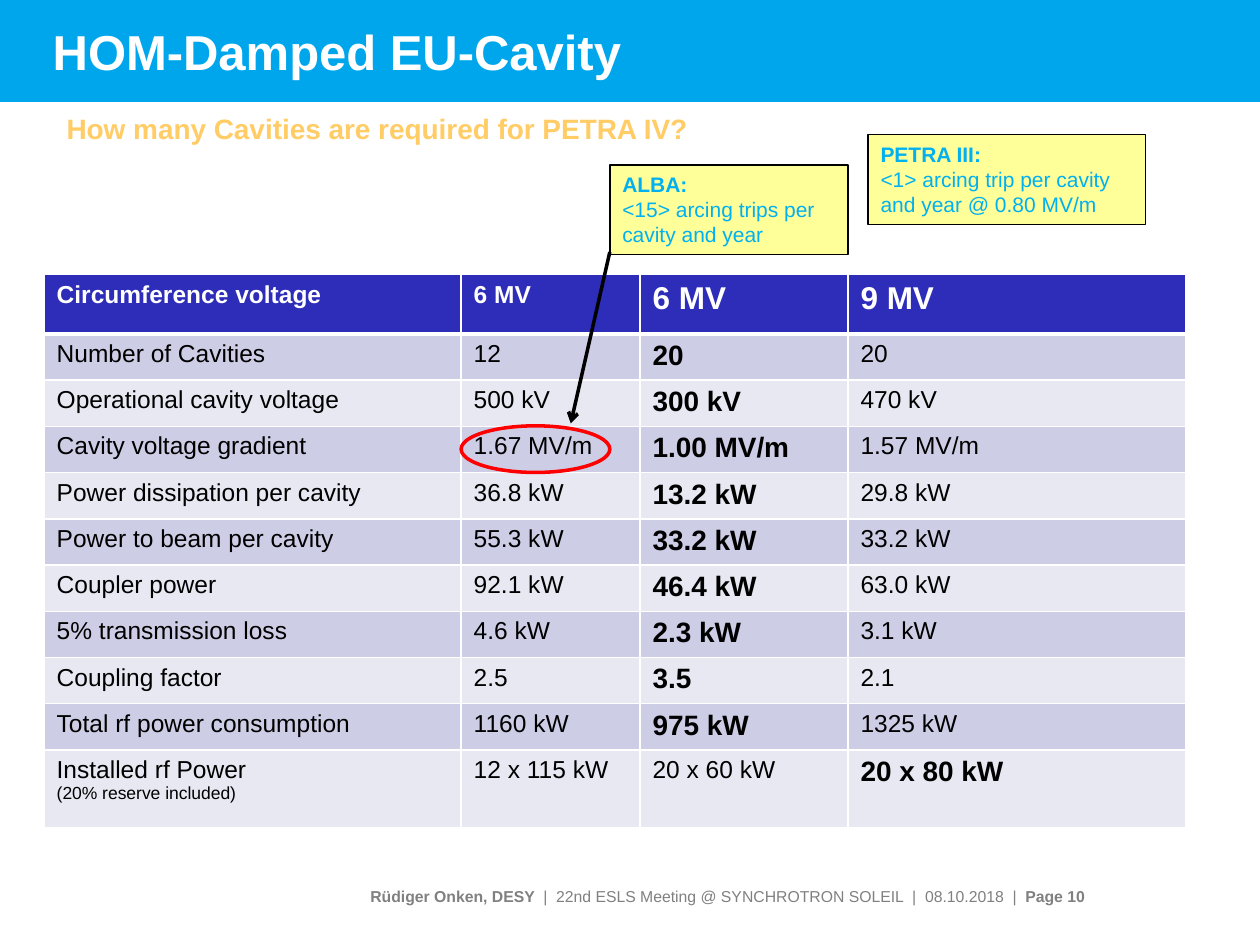
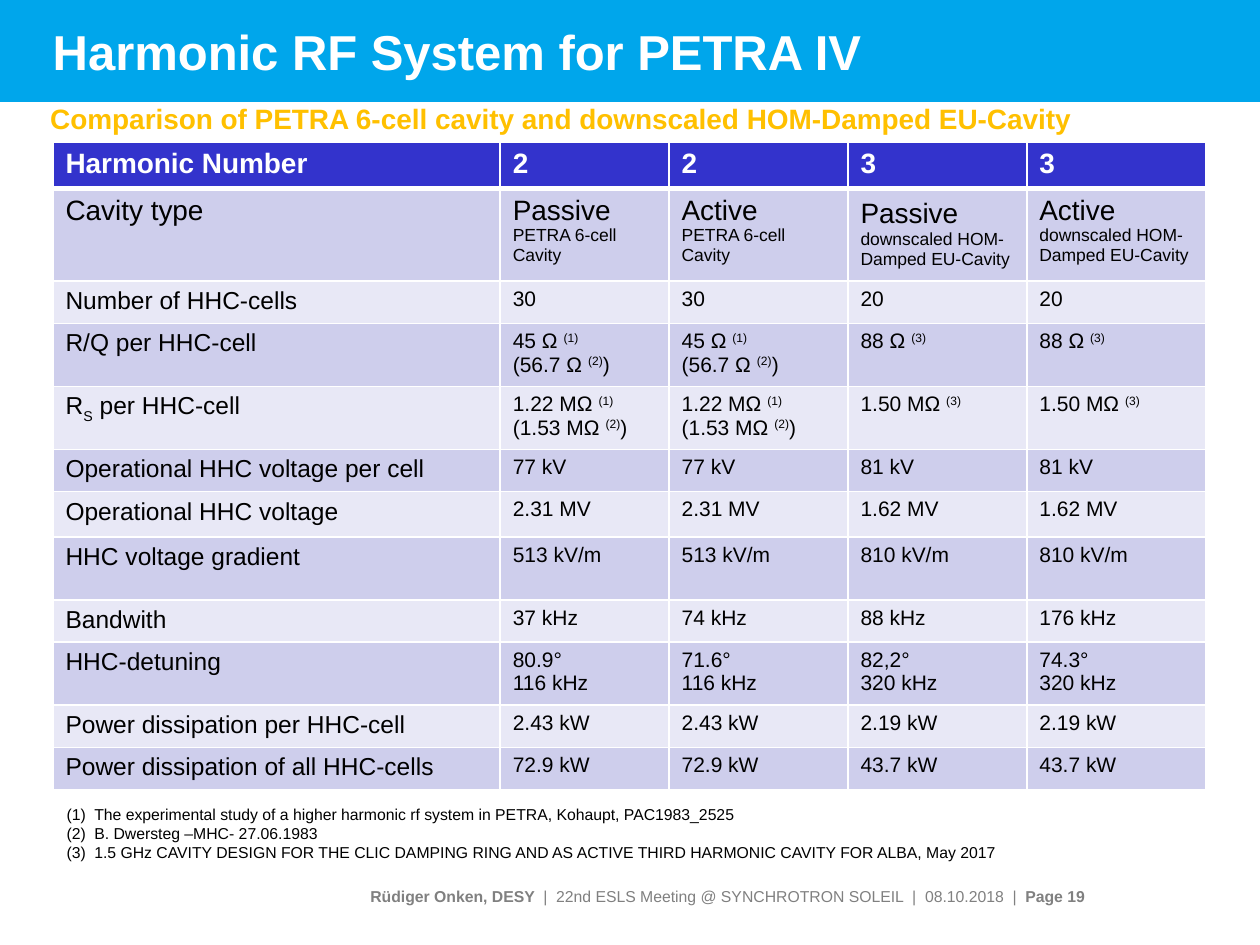
from lxml import etree
from pptx import Presentation
from pptx.dml.color import RGBColor
from pptx.enum.shapes import MSO_CONNECTOR, MSO_SHAPE
from pptx.enum.text import MSO_ANCHOR, PP_ALIGN
from pptx.oxml.ns import qn
from pptx.util import Inches, Pt

RECTANGLE, ELLIPSE = MSO_SHAPE.RECTANGLE, MSO_SHAPE.OVAL
STRAIGHT = MSO_CONNECTOR.STRAIGHT
TOP, MIDDLE = MSO_ANCHOR.TOP, MSO_ANCHOR.MIDDLE
LEFT, RIGHT = PP_ALIGN.LEFT, PP_ALIGN.RIGHT

# The slide is a grid of 100 columns by 75 rows; every length counts grid cells
SLIDE_WIDTH, SLIDE_HEIGHT = Inches(10), Inches(7.5)
CELL = SLIDE_WIDTH // 100

FONT = "Arial"
WHITE, BLACK, GREY, RED = "FFFFFF", "000000", "808080", "FF0000"
BAND_BLUE, NOTE_BLUE, NOTE_YELLOW = "00A6EB", "00B0F0", "FFFF99"

# Header fill and the two alternating row fills
VOLTAGE_FILLS = ("2D2DB9", "CDCDE6", "E8E8F3")
HARMONIC_FILLS = ("3333CC", "CECEEC", "E8E8F6")

TITLE_BOX = (3.2, 0, 93.1, 8.1)
FOOTER_BOX = (3.1, 68.95, 83, 4.4)

VOLTAGE_COLUMNS = (33.1, 14.2, 16.5, 26.8)
VOLTAGE_ROWS = (4.7,) + (3.53,) * 9 + (6.2,)
VOLTAGE_CELLS = (
    ("Circumference voltage", "6 MV", "6 MV", "9 MV"),
    ("Number of Cavities", "12", "20", "20"),
    ("Operational cavity voltage", "500 kV", "300 kV", "470 kV"),
    ("Cavity voltage gradient", "1.67 MV/m", "1.00 MV/m", "1.57 MV/m"),
    ("Power dissipation per cavity", "36.8 kW", "13.2 kW", "29.8 kW"),
    ("Power to beam per cavity", "55.3 kW", "33.2 kW", "33.2 kW"),
    ("Coupler power", "92.1 kW", "46.4 kW", "63.0 kW"),
    ("5% transmission loss", "4.6 kW", "2.3 kW", "3.1 kW"),
    ("Coupling factor", "2.5", "3.5", "2.1"),
    ("Total rf power consumption", "1160 kW", "975 kW", "1325 kW"),
    ("Installed rf Power\n(20% reserve included)", "12 x 115 kW", "20 x 60 kW", "20 x 80 kW"),
)

# Carets enclose raised or lowered text; line breaks separate paragraphs
HARMONIC_COLUMNS = (35.5, 13.4, 14.2, 14.2, 14.2)
HARMONIC_ROWS = (3.65, 7.3, 3.35, 5, 5, 3.35, 3.6, 5, 3.35, 5, 3.35, 3.35)
SIX_CELL, DOWNSCALED = "PETRA 6-cell Cavity", "downscaled HOM-Damped EU-Cavity"
R_OVER_Q = "45 Ω ^(1)^\n(56.7 Ω ^(2)^)"
SHUNT = "1.22 MΩ ^(1)^\n(1.53 MΩ ^(2)^)"
HARMONIC_CELLS = (
    ("Harmonic Number", "2", "2", "3", "3"),
    ("Cavity type", f"Passive\n{SIX_CELL}", f"Active\n{SIX_CELL}", "Passive", f"Active\n{DOWNSCALED}"),
    ("Number of HHC-cells", "30", "30", "20", "20"),
    ("R/Q per HHC-cell", R_OVER_Q, R_OVER_Q, "88 Ω ^(3)^", "88 Ω ^(3)^"),
    ("R^S^ per HHC-cell", SHUNT, SHUNT, "1.50 MΩ ^(3)^", "1.50 MΩ ^(3)^"),
    ("Operational HHC voltage per cell", "77 kV", "77 kV", "81 kV", "81 kV"),
    ("Operational HHC voltage", "2.31 MV", "2.31 MV", "1.62 MV", "1.62 MV"),
    ("HHC voltage gradient", "513 kV/m", "513 kV/m", "810 kV/m", "810 kV/m"),
    ("Bandwith", "37 kHz", "74 kHz", "88 kHz", "176 kHz"),
    ("HHC-detuning", "80.9°\n116 kHz", "71.6°\n116 kHz", "82,2°\n320 kHz", "74.3°\n320 kHz"),
    ("Power dissipation per HHC-cell", "2.43 kW", "2.43 kW", "2.19 kW", "2.19 kW"),
    ("Power dissipation of all HHC-cells", "72.9 kW", "72.9 kW", "43.7 kW", "43.7 kW"),
)
REFERENCES = (
    "The experimental study of a higher harmonic rf system in PETRA, Kohaupt, PAC1983_2525",
    "B. Dwersteg –MHC- 27.06.1983",
    "1.5 GHz CAVITY DESIGN FOR THE CLIC DAMPING RING AND AS ACTIVE THIRD HARMONIC CAVITY FOR ALBA, May 2017",
)


def color(hex_string):
    return RGBColor.from_string(hex_string)


def grid(*counts):
    return [round(count * CELL) for count in counts]


def style(paragraph, size, hex_color, bold=False, align=LEFT):
    paragraph.alignment = align
    font = paragraph.font
    font.name, font.size, font.bold = FONT, Pt(size), bold
    font.color.rgb = color(hex_color)


def add_run(paragraph, text):
    run = paragraph.add_run()
    run.text = text
    return run


def paragraphs_for(frame, count):
    """Return the frame's first paragraph followed by new ones."""
    return [frame.paragraphs[0]] + [frame.add_paragraph() for _ in range(count - 1)]


def add_text_box(slide, box, anchor=TOP):
    frame = slide.shapes.add_textbox(*grid(*box)).text_frame
    frame.word_wrap = True
    frame.vertical_anchor = anchor
    return frame


def add_line_of_text(slide, box, text, size, hex_color, anchor=TOP):
    paragraph = add_text_box(slide, box, anchor).paragraphs[0]
    add_run(paragraph, text)
    style(paragraph, size, hex_color, bold=True)


def add_shape(slide, kind, box, fill=None, line=None, width=1):
    shape = slide.shapes.add_shape(kind, *grid(*box))
    shape.shadow.inherit = False
    if fill:
        shape.fill.solid()
        shape.fill.fore_color.rgb = color(fill)
    else:
        shape.fill.background()
    if line:
        shape.line.color.rgb = color(line)
        shape.line.width = Pt(width)
    else:
        shape.line.fill.background()
    return shape


def add_footer(slide, box, page):
    frame = add_text_box(slide, box, MIDDLE)
    frame.margin_right = 0
    paragraph = frame.paragraphs[0]
    add_run(paragraph, "Rüdiger Onken, DESY  ").font.bold = True
    add_run(paragraph, "|  22nd ESLS Meeting @ SYNCHROTRON SOLEIL  |  08.10.2018  |  ")
    add_run(paragraph, f"Page {page}").font.bold = True
    style(paragraph, 9, GREY, align=RIGHT)


def add_base_slide(presentation, title, page):
    """Add a slide with the title band and the footer."""
    slide = presentation.slides.add_slide(presentation.slide_layouts[6])
    add_shape(slide, RECTANGLE, (0, 0, 100, 8.1), BAND_BLUE)
    add_line_of_text(slide, TITLE_BOX, title, 28, WHITE, MIDDLE)
    add_footer(slide, FOOTER_BOX, page)
    return slide


def set_borders(cell, row):
    """Draw white cell borders, with a thick rule under the header."""
    widths = {"lnL": 1, "lnR": 1, "lnT": 3 if row == 1 else 1, "lnB": 3 if row == 0 else 1}
    properties = cell._tc.get_or_add_tcPr()
    for position, (tag, width) in enumerate(widths.items()):
        line = etree.Element(qn(f"a:{tag}"), w=str(Pt(width)))
        fill = etree.SubElement(line, qn("a:solidFill"))
        etree.SubElement(fill, qn("a:srgbClr"), val=WHITE)
        properties.insert(position, line)


def add_marked_text(paragraph, text):
    for index, piece in enumerate(text.split("^")):
        if piece:
            run = add_run(paragraph, piece)
            if index % 2:
                baseline = -25000 if piece == "S" else 30000
                run._r.get_or_add_rPr().set("baseline", str(baseline))


def add_table(slide, corner, columns, rows, cells, fills, text_style):
    """Place a table; text_style gives size and weight by row, column and line."""
    box = (*corner, sum(columns), sum(rows))
    table = slide.shapes.add_table(len(rows), len(columns), *grid(*box)).table
    for column, width in zip(table.columns, grid(*columns)):
        column.width = width
    for row, height in zip(table.rows, grid(*rows)):
        row.height = height
    for row, texts in enumerate(cells):
        for column, text in enumerate(texts):
            cell = table.cell(row, column)
            cell.fill.solid()
            cell.fill.fore_color.rgb = color(fills[0] if row == 0 else fills[2 - row % 2])
            set_borders(cell, row)
            lines = text.split("\n")
            for line, paragraph in enumerate(paragraphs_for(cell.text_frame, len(lines))):
                add_marked_text(paragraph, lines[line])
                size, bold = text_style(row, column, line)
                style(paragraph, size, BLACK if row else WHITE, bold)
    return table


def voltage_style(row, column, line):
    if row == 0:
        return (18 if column > 1 else 14), True
    if line:
        return 10, False
    chosen = column == (3 if row == len(VOLTAGE_ROWS) - 1 else 2)
    return (16, True) if chosen else (14, False)


def harmonic_style(row, column, line):
    if row < 2:
        return (10 if line else 16), row == 0
    return (12 if column else 14), False


def add_note(slide, box, heading, text):
    frame = add_shape(slide, RECTANGLE, box, NOTE_YELLOW, BLACK, 0.75).text_frame
    frame.word_wrap = True
    frame.vertical_anchor = TOP
    first, second = paragraphs_for(frame, 2)
    add_run(first, heading)
    add_run(second, text)
    style(first, 12, NOTE_BLUE, bold=True)
    style(second, 12, NOTE_BLUE)


def add_arrow(slide, start, end):
    arrow = slide.shapes.add_connector(STRAIGHT, *grid(*start, *end))
    arrow.line.color.rgb = color(BLACK)
    arrow.line.width = Pt(2)
    etree.SubElement(arrow.line._get_or_add_ln(), qn("a:tailEnd"), type="arrow")
    etree.SubElement(arrow._element.spPr, qn("a:effectLst"))


def add_references(slide, box):
    frame = add_text_box(slide, box)
    for number, paragraph in enumerate(paragraphs_for(frame, len(REFERENCES)), 1):
        hanging = Inches(0.22)
        properties = paragraph._p.get_or_add_pPr()
        properties.set("marL", str(hanging))
        properties.set("indent", str(-hanging))
        add_run(paragraph, f"({number})\t{REFERENCES[number - 1]}")
        style(paragraph, 9, BLACK)


def build_cavity_slide(presentation):
    slide = add_base_slide(presentation, "HOM-Damped EU-Cavity", 10)
    add_table(slide, (3.5, 21.8), VOLTAGE_COLUMNS, VOLTAGE_ROWS, VOLTAGE_CELLS,
              VOLTAGE_FILLS, voltage_style)
    # Gradient highlighted and explained by the notes
    add_shape(slide, ELLIPSE, (36.6, 33.8, 11.8, 3.7), line=RED, width=2)
    add_note(slide, (48.4, 13.1, 18.9, 7.1), "ALBA:", "<15> arcing trips per cavity and year")
    add_arrow(slide, (48.4, 20), (45.3, 33.6))
    add_note(slide, (68.9, 10.7, 22, 7.1), "PETRA III:",
             "<1> arcing trip per cavity and year @ 0.80 MV/m")
    add_line_of_text(slide, (4.3, 8.4, 53.5, 3.7),
                     "How many Cavities are required for PETRA IV?", 16, "FFCC66")


def build_harmonic_slide(presentation):
    slide = add_base_slide(presentation, "Harmonic RF System for PETRA IV", 19)
    add_line_of_text(slide, (3, 7.6, 89.8, 3.7),
                     "Comparison of PETRA 6-cell cavity and downscaled HOM-Damped EU-Cavity",
                     16, "FFC000")
    table = add_table(slide, (4.2, 11.3), HARMONIC_COLUMNS, HARMONIC_ROWS, HARMONIC_CELLS,
                      HARMONIC_FILLS, harmonic_style)
    # The passive third-harmonic cell keeps its cavity name in one paragraph
    passive = table.cell(1, 3).text_frame.paragraphs[0]
    add_run(passive, " ").font.size = Pt(18)
    add_run(passive, DOWNSCALED).font.size = Pt(10)
    add_references(slide, (4.3, 63.4, 92.1, 5.6))


def main():
    presentation = Presentation()
    presentation.slide_width, presentation.slide_height = SLIDE_WIDTH, SLIDE_HEIGHT
    build_cavity_slide(presentation)
    build_harmonic_slide(presentation)
    presentation.save("out.pptx")


if __name__ == "__main__":
    main()
